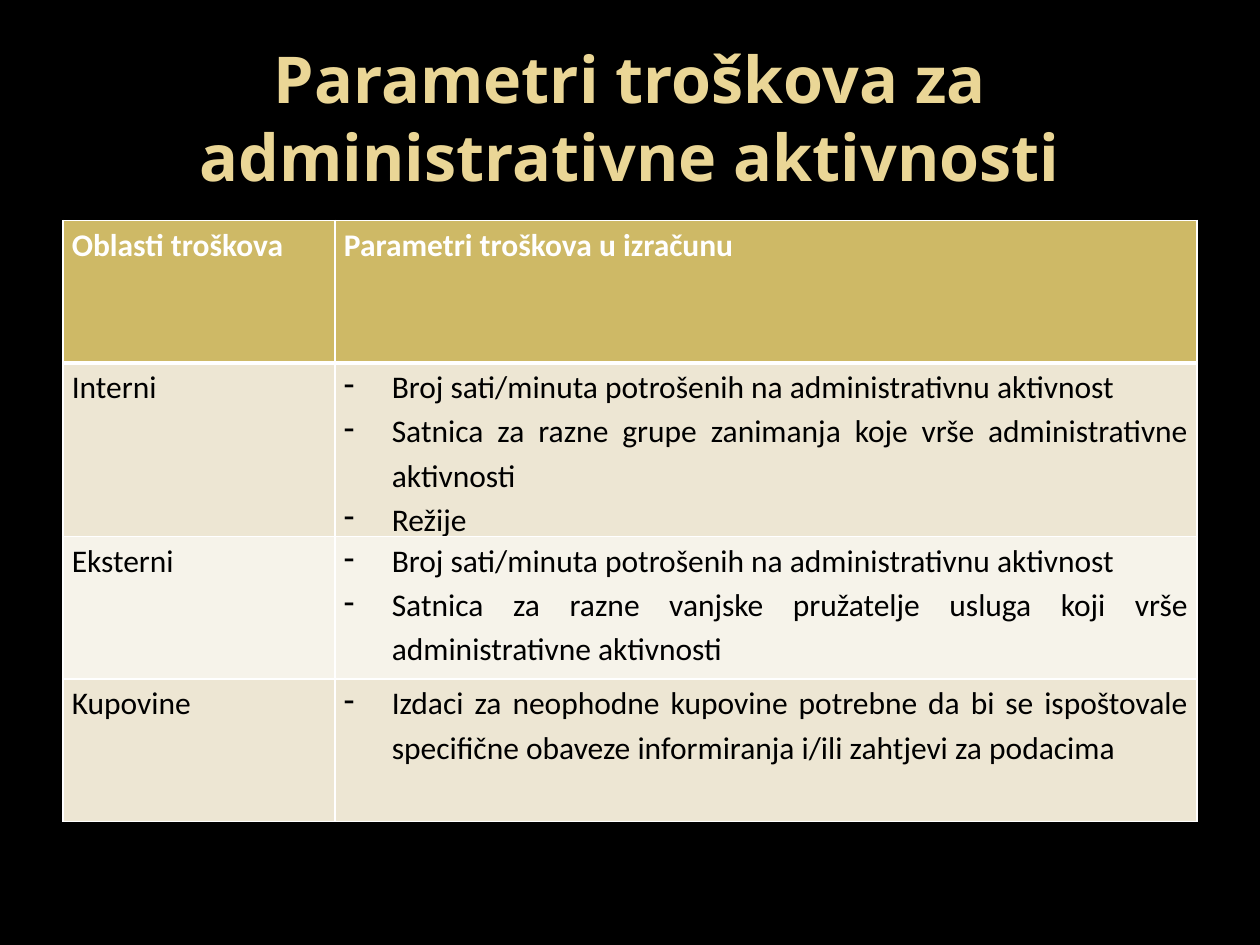
from lxml.etree import SubElement
from pptx import Presentation
from pptx.dml.color import RGBColor
from pptx.enum.text import MSO_ANCHOR, PP_ALIGN
from pptx.oxml import parse_xml
from pptx.oxml.ns import nsdecls, qn
from pptx.util import Inches, Pt

BLACK = RGBColor(0x00, 0x00, 0x00)
WHITE = RGBColor(0xFF, 0xFF, 0xFF)
PALE_GOLD = RGBColor(0xEA, 0xD6, 0x96)
GOLD = RGBColor(0xCE, 0xB9, 0x66)
SAND = RGBColor(0xED, 0xE6, 0xD3)
IVORY = RGBColor(0xF6, 0xF3, 0xEA)

MARGIN = Inches(0.5)
CONTENT_WIDTH = Inches(9)
COLUMN_SHARES = (0.24, 0.76)
ROW_HEIGHT = Inches(1.13)
CELL_INSET = Inches(0.07)
BULLET_INDENT = Inches(0.38)
THIN, THICK = Pt(1), Pt(3)

TITLE = "Parametri troškova za administrativne aktivnosti"
HEADERS = ("Oblasti troškova", "Parametri troškova u izračunu")
COST_AREAS = (
    ("Interni", (
        "Broj sati/minuta potrošenih na administrativnu aktivnost",
        "Satnica za razne grupe zanimanja koje vrše administrativne aktivnosti",
        "Režije",
    )),
    ("Eksterni", (
        "Broj sati/minuta potrošenih na administrativnu aktivnost",
        "Satnica za razne vanjske pružatelje usluga koji vrše administrativne aktivnosti",
    )),
    ("Kupovine", (
        "Izdaci za neophodne kupovine potrebne da bi se ispoštovale specifične "
        "obaveze informiranja i/ili zahtjevi za podacima",
    )),
)


def style_font(font, name, size, color, bold):
    font.name, font.size, font.bold = name, Pt(size), bold
    font.color.rgb = color


def add_title(page):
    box = page.shapes.add_textbox(MARGIN, Inches(0.3), CONTENT_WIDTH, Inches(1.25))
    frame = box.text_frame
    frame.word_wrap = True
    frame.vertical_anchor = MSO_ANCHOR.MIDDLE
    frame.text = TITLE
    para = frame.paragraphs[0]
    para.alignment = PP_ALIGN.CENTER
    style_font(para.runs[0].font, "Noto Sans", 36.9, PALE_GOLD, True)


def add_dash(para):
    """Give the paragraph a hanging dash bullet."""
    properties = para._p.get_or_add_pPr()
    properties.set("marL", str(BULLET_INDENT))
    properties.set("indent", str(-BULLET_INDENT))
    SubElement(properties, qn("a:buChar")).set("char", "-")


def set_borders(cell, top, bottom):
    widths = {"lnL": THIN, "lnR": THIN, "lnT": top, "lnB": bottom}
    properties = cell._tc.get_or_add_tcPr()
    for place, (tag, width) in enumerate(widths.items()):
        properties.insert(place, parse_xml(
            f'<a:{tag} {nsdecls("a")} w="{width}"><a:solidFill>'
            f'<a:srgbClr val="{WHITE}"/></a:solidFill></a:{tag}>'))


def fill_cell(cell, lines, fill, is_header=False, bulleted=False):
    cell.margin_left = cell.margin_right = CELL_INSET
    cell.margin_top = cell.margin_bottom = 0
    cell.fill.solid()
    cell.fill.fore_color.rgb = fill
    cell.text_frame.text = "\n".join(lines)
    for para in cell.text_frame.paragraphs:
        para.alignment = PP_ALIGN.JUSTIFY
        para.line_spacing = 1.15
        if bulleted:
            add_dash(para)
        style_font(para.runs[0].font, "Calibri", 18,
                   WHITE if is_header else BLACK, is_header)


def add_cost_table(page):
    row_count = len(COST_AREAS) + 1
    table = page.shapes.add_table(row_count, len(HEADERS), MARGIN, Inches(1.75),
                                  CONTENT_WIDTH, ROW_HEIGHT * row_count).table
    for column, share in zip(table.columns, COLUMN_SHARES):
        column.width = int(CONTENT_WIDTH * share)
    for row in table.rows:
        row.height = ROW_HEIGHT
    for index, header in enumerate(HEADERS):
        cell = table.cell(0, index)
        fill_cell(cell, [header], GOLD, is_header=True)
        set_borders(cell, THIN, THICK)
    for number, (area, parameters) in enumerate(COST_AREAS, start=1):
        band = SAND if number % 2 else IVORY
        fill_cell(table.cell(number, 0), [area], band)
        fill_cell(table.cell(number, 1), parameters, band, bulleted=True)
        for cell in table.rows[number].cells:
            set_borders(cell, THICK if number == 1 else THIN, THIN)


def main():
    deck = Presentation()
    deck.slide_width, deck.slide_height = Inches(10), Inches(7.5)
    page = deck.slides.add_slide(deck.slide_layouts[6])
    page.background.fill.solid()
    page.background.fill.fore_color.rgb = BLACK
    add_title(page)
    add_cost_table(page)
    deck.save("out.pptx")


if __name__ == "__main__":
    main()
